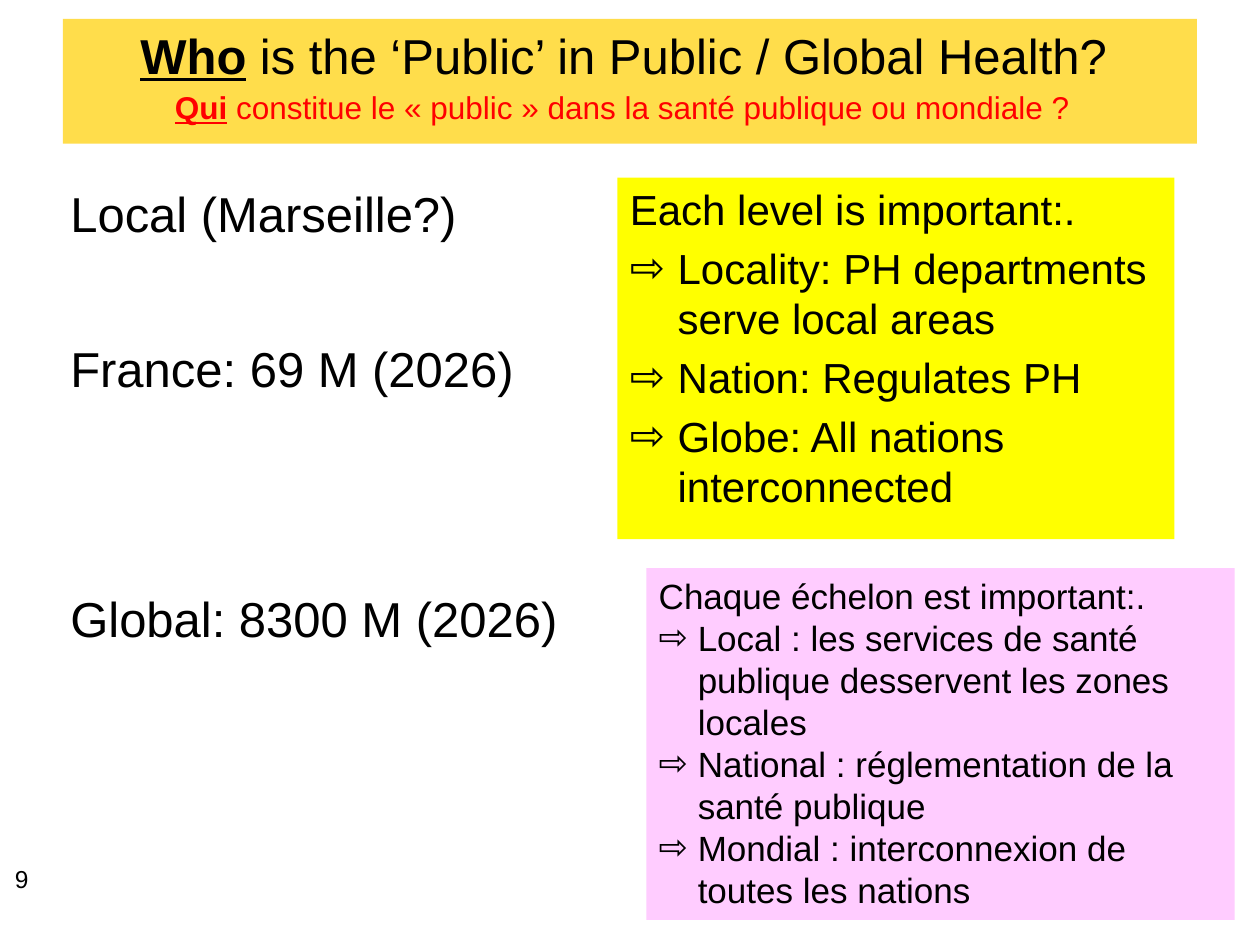
from lxml import etree
from pptx import Presentation
from pptx.dml.color import RGBColor
from pptx.enum.shapes import MSO_SHAPE
from pptx.enum.text import MSO_ANCHOR, PP_ALIGN
from pptx.oxml.ns import qn
from pptx.util import Inches, Pt

RECTANGLE = MSO_SHAPE.RECTANGLE
TOP = MSO_ANCHOR.TOP
LEFT, CENTER = PP_ALIGN.LEFT, PP_ALIGN.CENTER

BLACK = RGBColor(0x00, 0x00, 0x00)
RED = RGBColor(0xFF, 0x00, 0x00)
GOLD = RGBColor(0xFF, 0xDD, 0x4B)
YELLOW = RGBColor(0xFF, 0xFF, 0x00)
PINK = RGBColor(0xFF, 0xCC, 0xFF)

FONT = "Arial"
ARROW_BULLET = "⇨"

LEVELS = [("Local (Marseille?)", 0), ("France: 69 M (2026)", 54.5),
          ("Global: 8300 M (2026)", 109.5)]
ENGLISH_POINTS = ["Locality: PH departments serve local areas",
                  "Nation: Regulates PH",
                  "Globe: All nations interconnected"]
FRENCH_POINTS = ["Local : les services de santé publique desservent les zones locales",
                 "National : réglementation de la santé publique",
                 "Mondial : interconnexion de toutes les nations"]


def add_text_frame(slide, box, fill=None):
    """Add a filled panel, or a plain text box without a fill; return its text frame."""
    lengths = [Inches(length) for length in box]
    if fill is None:
        holder = slide.shapes.add_textbox(*lengths)
    else:
        holder = slide.shapes.add_shape(RECTANGLE, *lengths)
        holder.shadow.inherit = False
        holder.fill.solid()
        holder.fill.fore_color.rgb = fill
        holder.line.fill.background()
    frame = holder.text_frame
    frame.word_wrap = True
    frame.vertical_anchor = TOP
    return frame


def add_run(paragraph, text, size, color=BLACK, emphasis=False):
    run = paragraph.add_run()
    run.text = text
    run.font.name = FONT
    run.font.size = Pt(size)
    run.font.color.rgb = color
    run.font.bold = emphasis
    run.font.underline = emphasis


def add_arrow_bullet(paragraph, indent):
    properties = paragraph._p.get_or_add_pPr()
    properties.set("marL", str(Inches(indent)))
    properties.set("indent", str(-Inches(indent)))
    etree.SubElement(properties, qn("a:buFont")).set("typeface", FONT)
    etree.SubElement(properties, qn("a:buChar")).set("char", ARROW_BULLET)


def add_heading(slide, box):
    left, top, width, height = box
    title = add_text_frame(slide, box, GOLD)
    title.margin_right = Inches(0.2)
    question = title.paragraphs[0]
    question.alignment = CENTER
    add_run(question, "Who", 28, emphasis=True)
    add_run(question, " is the ‘Public’ in Public / Global Health?", 28)

    subtitle_box = (left + 0.79, top + 0.5, width - 1.33, 0.4)
    translation = add_text_frame(slide, subtitle_box).paragraphs[0]
    add_run(translation, "Qui", 18, RED, emphasis=True)
    add_run(translation, " constitue le « public » dans la santé publique ou mondiale ?",
            18, RED)


def add_levels(slide, box):
    frame = add_text_frame(slide, box)
    for index, (level, gap) in enumerate(LEVELS):
        paragraph = frame.add_paragraph() if index else frame.paragraphs[0]
        paragraph.space_before = Pt(gap)
        add_run(paragraph, level, 28)


def add_points_panel(slide, box, fill, lead, points, size, indent, gap):
    frame = add_text_frame(slide, box, fill)
    opening = frame.paragraphs[0]
    opening.alignment = LEFT
    add_run(opening, lead, size)
    for point in points:
        paragraph = frame.add_paragraph()
        paragraph.alignment = LEFT
        paragraph.space_before = Pt(gap)
        add_arrow_bullet(paragraph, indent)
        add_run(paragraph, point, size)


def add_page_number(slide, box):
    add_run(add_text_frame(slide, box).paragraphs[0], "9", 14)


def main():
    presentation = Presentation()
    presentation.slide_width = Inches(10)
    presentation.slide_height = Inches(7.5)
    slide = presentation.slides.add_slide(presentation.slide_layouts[6])

    add_heading(slide, (0.5, 0.15, 9, 0.99))
    add_levels(slide, (0.46, 1.41, 4.42, 5.6))
    add_points_panel(slide, (4.9, 1.41, 4.42, 2.87), YELLOW,
                     "Each level is important:.", ENGLISH_POINTS, 24, 0.38, 4.8)
    add_page_number(slide, (0.02, 6.81, 2.33, 0.52))
    add_points_panel(slide, (5.13, 4.51, 4.67, 2.79), PINK,
                     "Chaque échelon est important:.", FRENCH_POINTS, 20, 0.31, 0)

    presentation.save("out.pptx")


if __name__ == "__main__":
    main()
